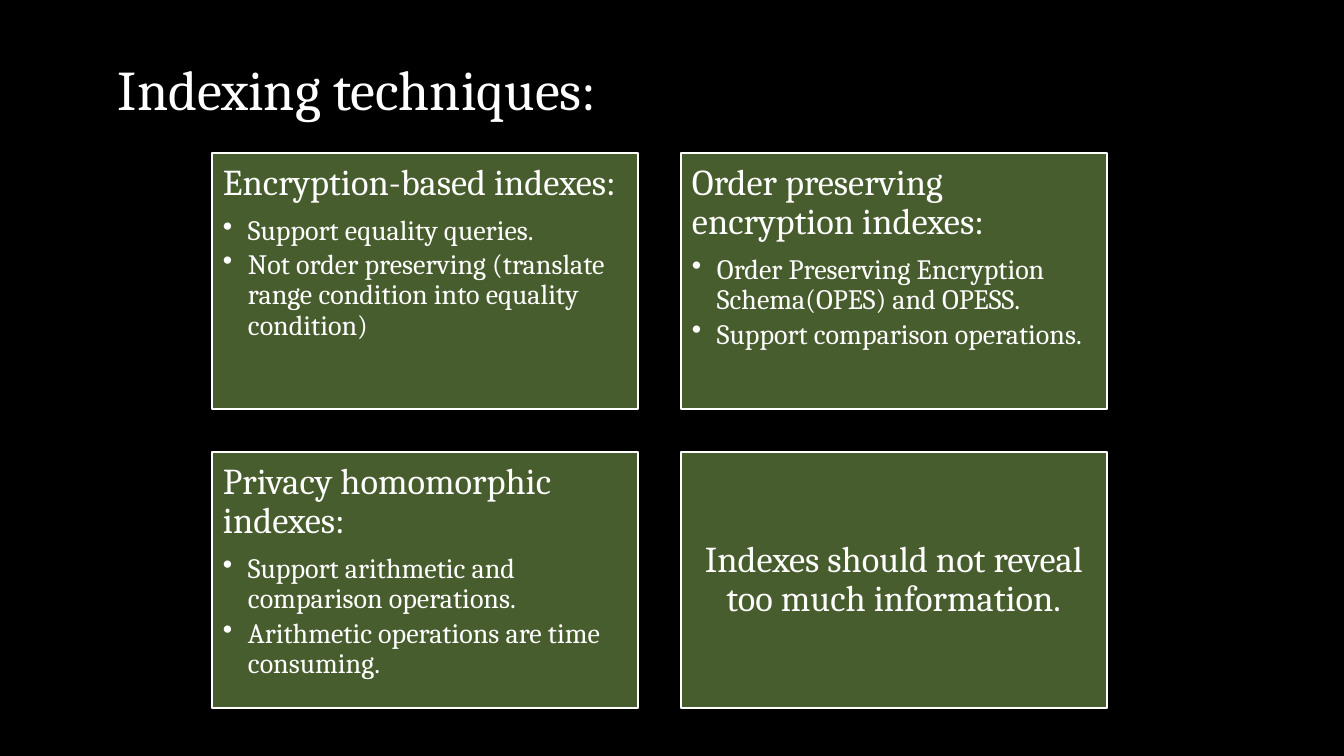
from lxml.etree import SubElement
from pptx import Presentation
from pptx.dml.color import RGBColor
from pptx.enum.shapes import MSO_SHAPE as Preset
from pptx.enum.text import MSO_ANCHOR as Anchor, PP_ALIGN as Align
from pptx.oxml.ns import qn
from pptx.util import Pt

PX = 914400 / 100.8
INDENT = 25
CARD_LEFT, CARD_TOP = 212, 153
CARD_WIDTH, CARD_HEIGHT = 426, 256
COLUMN_STEP, ROW_STEP = 469, 299

TECHNIQUES = [
    ("Encryption-based indexes:", [
        "Support equality queries.",
        "Not order preserving (translate range condition into equality condition)",
    ]),
    ("Order preserving encryption indexes:", [
        "Order Preserving Encryption Schema(OPES) and OPESS.",
        "Support comparison operations.",
    ]),
    ("Privacy homomorphic indexes:", [
        "Support arithmetic and comparison operations.",
        "Arithmetic operations are time consuming.",
    ]),
    ("Indexes should not reveal too much information.", []),
]


def px(length):
    return round(length * PX)


def color(value):
    return RGBColor.from_string(value)


def write(paragraph, text, size, font, ink, spacing=0.9, after=0,
          align=Align.LEFT, bullet=False):
    if bullet:
        properties = paragraph._p.get_or_add_pPr()
        properties.set("marL", str(px(INDENT)))
        properties.set("indent", str(-px(INDENT)))
        SubElement(properties, qn("a:buChar")).set("char", "•")
        paragraph.level = 1
    paragraph.alignment = align
    paragraph.line_spacing = spacing
    paragraph.space_before = Pt(0)
    paragraph.space_after = Pt(after)
    run = paragraph.add_run()
    run.text = text
    run.font.size = Pt(size)
    run.font.name = font
    run.font.color.rgb = color(ink)


class Deck:
    font = "Cambria"
    ink = "FFFFFF"
    background = "000000"
    card_fill = "485D2E"

    def __init__(self):
        self.presentation = Presentation()
        self.presentation.slide_width = px(1344)
        self.presentation.slide_height = px(756)
        self.slide = self.presentation.slides.add_slide(
            self.presentation.slide_layouts[6])
        backdrop = self.slide.background.fill
        backdrop.solid()
        backdrop.fore_color.rgb = color(self.background)

    def title(self, text, left, top, width, height):
        heading = self.slide.shapes.add_textbox(
            px(left), px(top), px(width), px(height)).text_frame
        heading.word_wrap = True
        heading.vertical_anchor = Anchor.BOTTOM
        write(heading.paragraphs[0], text, 40, self.font, self.ink, spacing=0.8)

    def card(self, heading, points, left, top):
        card = self.slide.shapes.add_shape(
            Preset.RECTANGLE, px(left), px(top), px(CARD_WIDTH), px(CARD_HEIGHT))
        card.shadow.inherit = False
        card.fill.solid()
        card.fill.fore_color.rgb = color(self.card_fill)
        card.line.color.rgb = color(self.ink)
        card.line.width = Pt(1.5)
        body = card.text_frame
        body.word_wrap = True
        body.margin_left = body.margin_right = px(11)
        body.margin_top = body.margin_bottom = px(11)
        body.vertical_anchor = Anchor.TOP if points else Anchor.MIDDLE
        write(body.paragraphs[0], heading, 26, self.font, self.ink, after=9,
              align=Align.LEFT if points else Align.CENTER)
        for point in points:
            write(body.add_paragraph(), point, 20, self.font, self.ink,
                  after=3, bullet=True)


def main():
    deck = Deck()
    deck.title("Indexing techniques:", 108, 0, 1058, 126)
    for position, (heading, points) in enumerate(TECHNIQUES):
        row, column = divmod(position, 2)
        deck.card(heading, points, CARD_LEFT + column * COLUMN_STEP,
                  CARD_TOP + row * ROW_STEP)
    deck.presentation.save("out.pptx")


if __name__ == "__main__":
    main()
